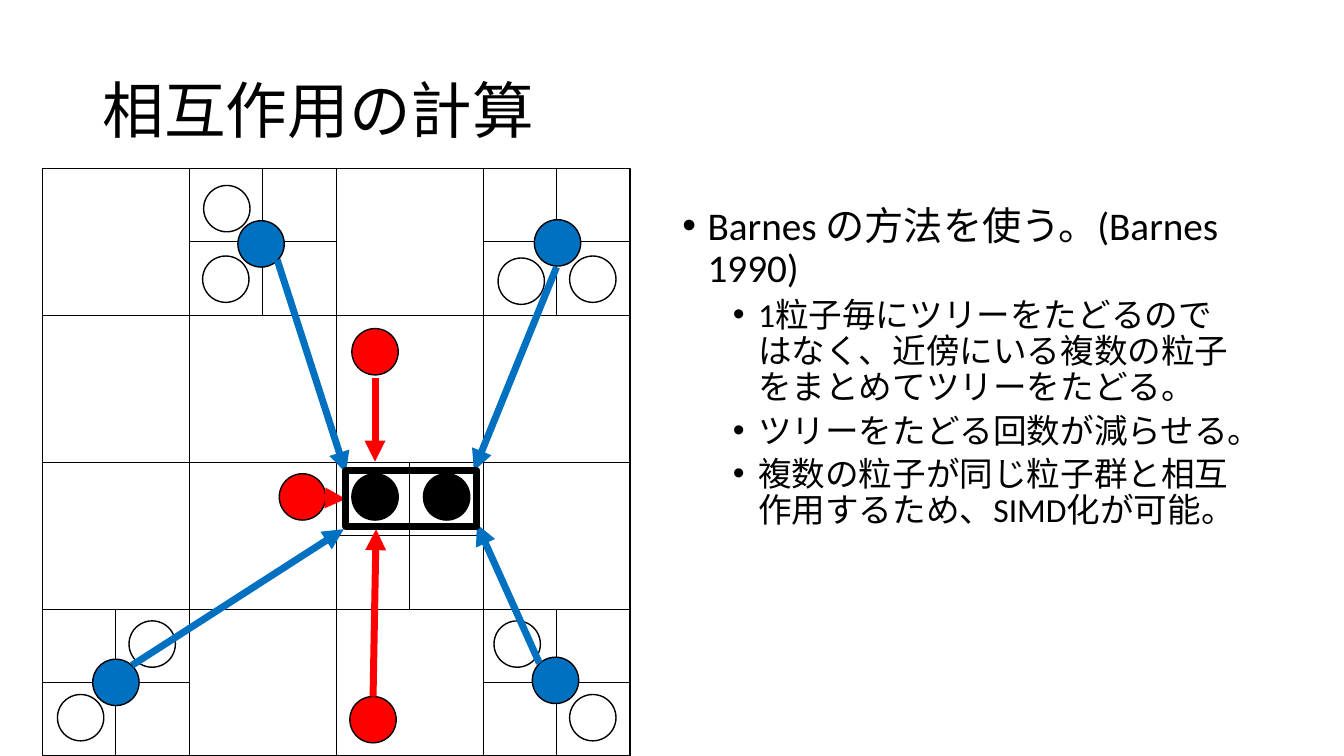
from dataclasses import dataclass

from lxml.etree import SubElement
from pptx import Presentation
from pptx.dml.color import RGBColor
from pptx.enum.shapes import MSO_CONNECTOR, MSO_SHAPE
from pptx.enum.text import MSO_ANCHOR
from pptx.oxml.ns import qn
from pptx.util import Inches, Pt


@dataclass(frozen=True)
class Theme:
    font: str = "Calibri"
    black: RGBColor = RGBColor(0x00, 0x00, 0x00)
    white: RGBColor = RGBColor(0xFF, 0xFF, 0xFF)
    red: RGBColor = RGBColor(0xFF, 0x00, 0x00)
    blue: RGBColor = RGBColor(0x00, 0x70, 0xC0)
    title_size: int = 44
    body_size: int = 28
    detail_size: int = 24
    grid_line: float = 0.5
    outline: float = 1
    bold_line: float = 5


THEME = Theme()

# Tree cells: a square of four by four, some cells split once more
LEFT, TOP, SIDE = 0.42, 1.67, 5.83
CELL = SIDE / 4
DIAMETER = 0.46
# Column and row of each split cell
SPLIT_CELLS = [(1, 0), (3, 0), (0, 3), (3, 3), (2, 2)]

# Left and top of each particle
FAR_PARTICLES = [(2.01, 2.54), (5.65, 6.89), (1.28, 6.16), (0.57, 6.89),
                 (4.94, 2.56), (5.65, 2.54), (4.9, 6.16), (2.02, 1.84)]
TARGET_PARTICLES = [(4.2, 4.7), (3.49, 4.7)]
NEAR_PARTICLES = [(3.47, 6.91), (3.49, 3.26), (2.77, 4.7)]
MASS_CENTRES = [(5.28, 6.52), (0.92, 6.54), (2.36, 2.19), (5.3, 2.18)]

# Start and end of each force
CELL_FORCES = [((2.75, 2.58), (3.43, 4.69)), ((5.52, 2.65), (4.7, 4.67)),
               ((1.31, 6.6), (3.41, 5.25)), ((5.35, 6.58), (4.73, 5.2))]
PARTICLE_FORCES = [((3.72, 3.75), (3.72, 4.58)), ((3.7, 6.91), (3.73, 5.25)),
                   ((3.22, 4.94), (3.43, 4.95))]

BULLETS = [
    (0, "Barnes の方法を使う。(Barnes 1990)"),
    (1, "1粒子毎にツリーをたどるのではなく、近傍にいる複数の粒子をまとめてツリーをたどる。"),
    (1, "ツリーをたどる回数が減らせる。"),
    (1, "複数の粒子が同じ粒子群と相互作用するため、SIMD化が可能。"),
]


def add_outline(shapes, kind, left, top, width, height, fill, weight):
    shape = shapes.add_shape(kind, Inches(left), Inches(top), Inches(width), Inches(height))
    shape.shadow.inherit = False
    if fill is None:
        shape.fill.background()
    else:
        shape.fill.solid()
        shape.fill.fore_color.rgb = fill
    shape.line.color.rgb = THEME.black
    shape.line.width = Pt(weight)


def add_line(shapes, start, end, color, weight, arrow=False):
    line = shapes.add_connector(MSO_CONNECTOR.STRAIGHT, *map(Inches, start + end))
    line.line.color.rgb = color
    line.line.width = Pt(weight)
    if arrow:
        SubElement(line.line._get_or_add_ln(), qn("a:tailEnd"), type="triangle")
    SubElement(line._element.spPr, qn("a:effectLst"))


def add_particles(shapes, places, fill):
    for left, top in places:
        add_outline(shapes, MSO_SHAPE.OVAL, left, top, DIAMETER, DIAMETER, fill, THEME.outline)


def add_forces(shapes, forces, color):
    for start, end in forces:
        add_line(shapes, start, end, color, THEME.bold_line, arrow=True)


def add_cross(shapes, left, top, size):
    """Split a square into four with two thin lines."""
    middle_x, middle_y = left + size / 2, top + size / 2
    for start, end in [((left, middle_y), (left + size, middle_y)),
                       ((middle_x, top), (middle_x, top + size))]:
        add_line(shapes, start, end, THEME.black, THEME.grid_line)


def add_tree(shapes):
    add_outline(shapes, MSO_SHAPE.RECTANGLE, LEFT, TOP, SIDE, SIDE, THEME.white, THEME.outline)
    for step in range(1, 4):
        x, y = LEFT + step * CELL, TOP + step * CELL
        add_line(shapes, (LEFT, y), (LEFT + SIDE, y), THEME.black, THEME.grid_line)
        add_line(shapes, (x, TOP), (x, TOP + SIDE), THEME.black, THEME.grid_line)
    for column, row in SPLIT_CELLS:
        add_cross(shapes, LEFT + column * CELL, TOP + row * CELL, CELL)


def add_text_frame(page, left, top, width, height, anchor):
    box = page.shapes.add_textbox(Inches(left), Inches(top), Inches(width), Inches(height))
    frame = box.text_frame
    frame.word_wrap = True
    frame.vertical_anchor = anchor
    return frame


def write_paragraph(para, text, size, space_before=0):
    para.text = text
    para.line_spacing = 0.9
    para.space_before = Pt(space_before)
    para.font.name = THEME.font
    para.font.size = Pt(size)
    para.font.color.rgb = THEME.black


def add_bullet(para, level):
    para.level = level
    properties = para._p.get_or_add_pPr()
    properties.set("marL", str(Inches(0.25 + 0.5 * level)))
    properties.set("indent", str(Inches(-0.25)))
    bullet_font = SubElement(properties, qn("a:buFont"), typeface="Arial")
    bullet = SubElement(properties, qn("a:buChar"), char="•")
    # Bullet settings come before the paragraph's font
    font = properties.find(qn("a:defRPr"))
    font.addprevious(bullet_font)
    font.addprevious(bullet)


def add_bullets(page):
    frame = add_text_frame(page, 6.67, 2, 5.75, 4.76, MSO_ANCHOR.TOP)
    for index, (level, text) in enumerate(BULLETS):
        para = frame.add_paragraph() if index else frame.paragraphs[0]
        size, gap = (THEME.detail_size, 5) if level else (THEME.body_size, 10)
        write_paragraph(para, text, size, gap)
        add_bullet(para, level)


def main():
    deck = Presentation()
    deck.slide_width, deck.slide_height = Inches(13.33), Inches(7.5)
    page = deck.slides.add_slide(deck.slide_layouts[6])

    # Title and explanation
    title = add_text_frame(page, 0.92, 0.4, 11.5, 1.45, MSO_ANCHOR.MIDDLE)
    write_paragraph(title.paragraphs[0], "相互作用の計算", THEME.title_size)
    add_bullets(page)

    # Tree with particles and forces
    diagram = page.shapes.add_group_shape().shapes
    add_tree(diagram)
    add_particles(diagram, FAR_PARTICLES, THEME.white)
    add_particles(diagram, TARGET_PARTICLES, THEME.black)
    add_particles(diagram, NEAR_PARTICLES, THEME.red)
    add_particles(diagram, MASS_CENTRES, THEME.blue)
    add_forces(diagram, CELL_FORCES, THEME.blue)
    add_forces(diagram, PARTICLE_FORCES, THEME.red)

    # Frame around the particles handled together
    add_outline(page.shapes, MSO_SHAPE.RECTANGLE, 3.43, 4.67, 1.3, 0.55, None, THEME.bold_line)

    deck.save("out.pptx")


if __name__ == "__main__":
    main()
